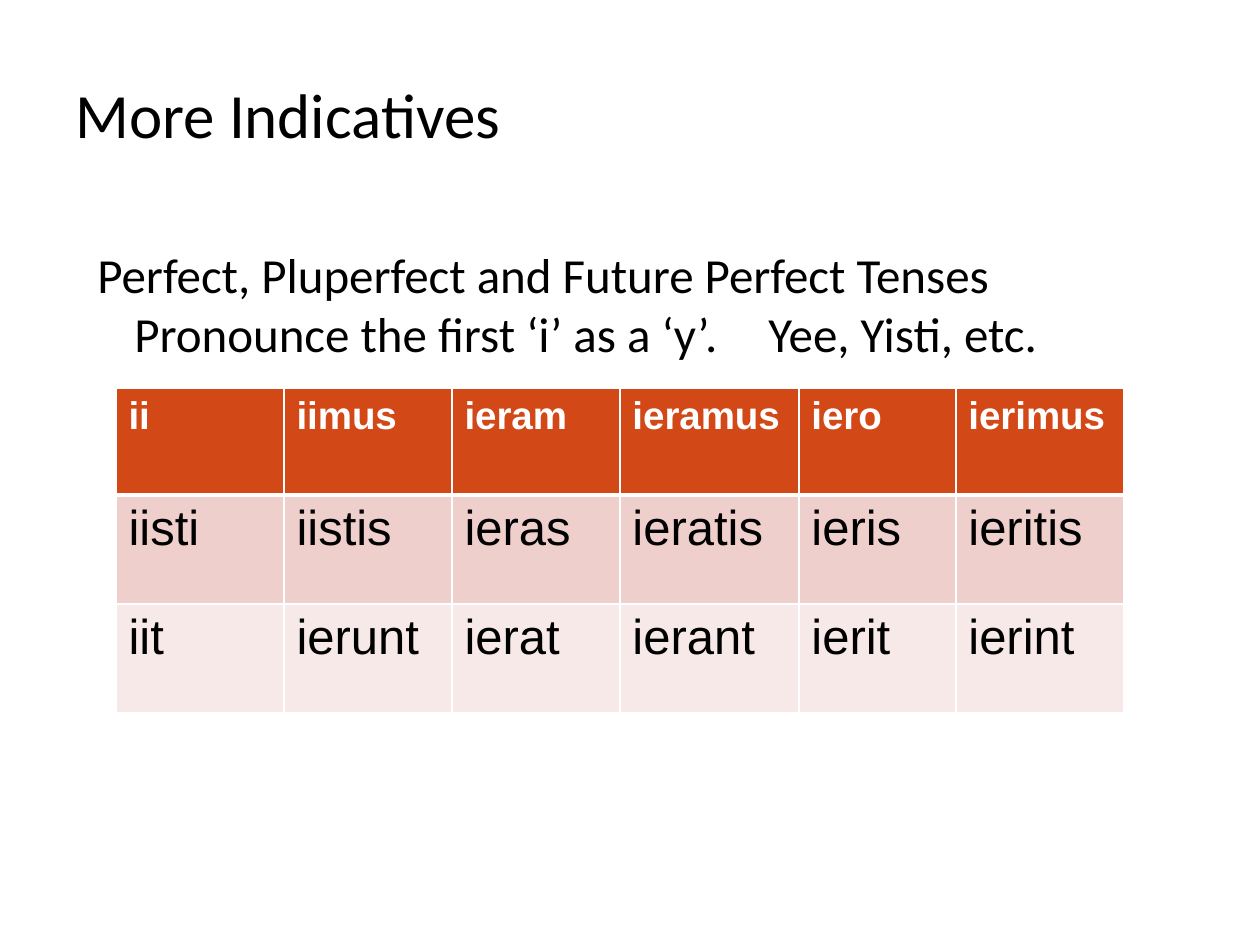
from lxml.etree import SubElement
from pptx import Presentation
from pptx.dml.color import RGBColor
from pptx.enum.text import MSO_ANCHOR
from pptx.oxml.ns import qn
from pptx.util import Emu, Pt

PX = 914400 // 126
WHITE = "FFFFFF"
BLACK = "000000"
HEADER_FILL = "D34817"
BODY_FILLS = ["EFCFCC", "F7E9E8"]
COLUMN_WIDTHS = [168, 168, 168, 179, 157, 168]
ROW_HEIGHTS = [107, 109, 109]
VERB_FORMS = [
    ["ii", "iimus", "ieram", "ieramus", "iero", "ierimus"],
    ["iisti", "iistis", "ieras", "ieratis", "ieris", "ieritis"],
    ["iit", "ierunt", "ierat", "ierant", "ierit", "ierint"],
]


def px(length):
    return Emu(length * PX)


def color(value):
    return RGBColor.from_string(value)


def write(paragraph, text, size=28, face="Calibri", ink=BLACK, bold=False, indent=0, tab=None):
    properties = paragraph._p.get_or_add_pPr()
    if indent:
        properties.set("marL", "0")
        properties.set("indent", str(px(indent)))
    if tab:
        stops = SubElement(properties, qn("a:tabLst"))
        SubElement(stops, qn("a:tab"), pos=str(px(tab)), algn="l")
    run = paragraph.add_run()
    run.text = text
    run.font.size = Pt(size)
    run.font.name = face
    run.font.bold = bold
    run.font.color.rgb = color(ink)


def add_text_frame(slide, left, top, width, height, anchor=MSO_ANCHOR.TOP):
    frame = slide.shapes.add_textbox(px(left), px(top), px(width), px(height)).text_frame
    frame.word_wrap = True
    frame.vertical_anchor = anchor
    return frame


def add_borders(cell, top, bottom):
    properties = cell._tc.get_or_add_tcPr()
    for side, weight in (("L", 1), ("R", 1), ("T", top), ("B", bottom)):
        border = SubElement(properties, qn(f"a:ln{side}"), w=str(Pt(weight)))
        fill = SubElement(border, qn("a:solidFill"))
        SubElement(fill, qn("a:srgbClr"), val=WHITE)


def add_verb_table(slide, left, top):
    table = slide.shapes.add_table(
        len(ROW_HEIGHTS), len(COLUMN_WIDTHS), px(left), px(top),
        px(sum(COLUMN_WIDTHS)), px(sum(ROW_HEIGHTS)),
    ).table
    for column, width in zip(table.columns, COLUMN_WIDTHS):
        column.width = px(width)
    for row, height in zip(table.rows, ROW_HEIGHTS):
        row.height = px(height)
    for row_index, forms in enumerate(VERB_FORMS):
        header = row_index == 0
        for column_index, form in enumerate(forms):
            cell = table.cell(row_index, column_index)
            add_borders(cell, top=3 if row_index == 1 else 1, bottom=3 if header else 1)
            cell.fill.solid()
            cell.fill.fore_color.rgb = color(HEADER_FILL if header else BODY_FILLS[row_index - 1])
            write(cell.text_frame.paragraphs[0], form, size=22 if header else 28,
                  face="Arial", ink=WHITE if header else BLACK, bold=header)


def main():
    presentation = Presentation()
    presentation.slide_width = px(1260)
    presentation.slide_height = px(945)
    slide = presentation.slides.add_slide(presentation.slide_layouts[6])

    title = add_text_frame(slide, 63, 10, 935, 147, anchor=MSO_ANCHOR.BOTTOM)
    write(title.paragraphs[0], "More Indicatives", size=36)

    notes = add_text_frame(slide, 63, 238, 1134, 581)
    write(notes.paragraphs[0], "Perfect, Pluperfect and Future Perfect Tenses", indent=22)
    write(notes.add_paragraph(), "Pronounce the first ‘i’ as a ‘y’.\tYee, Yisti, etc.",
          indent=59, tab=675)

    add_verb_table(slide, 116, 388)
    presentation.save("out.pptx")


if __name__ == "__main__":
    main()
